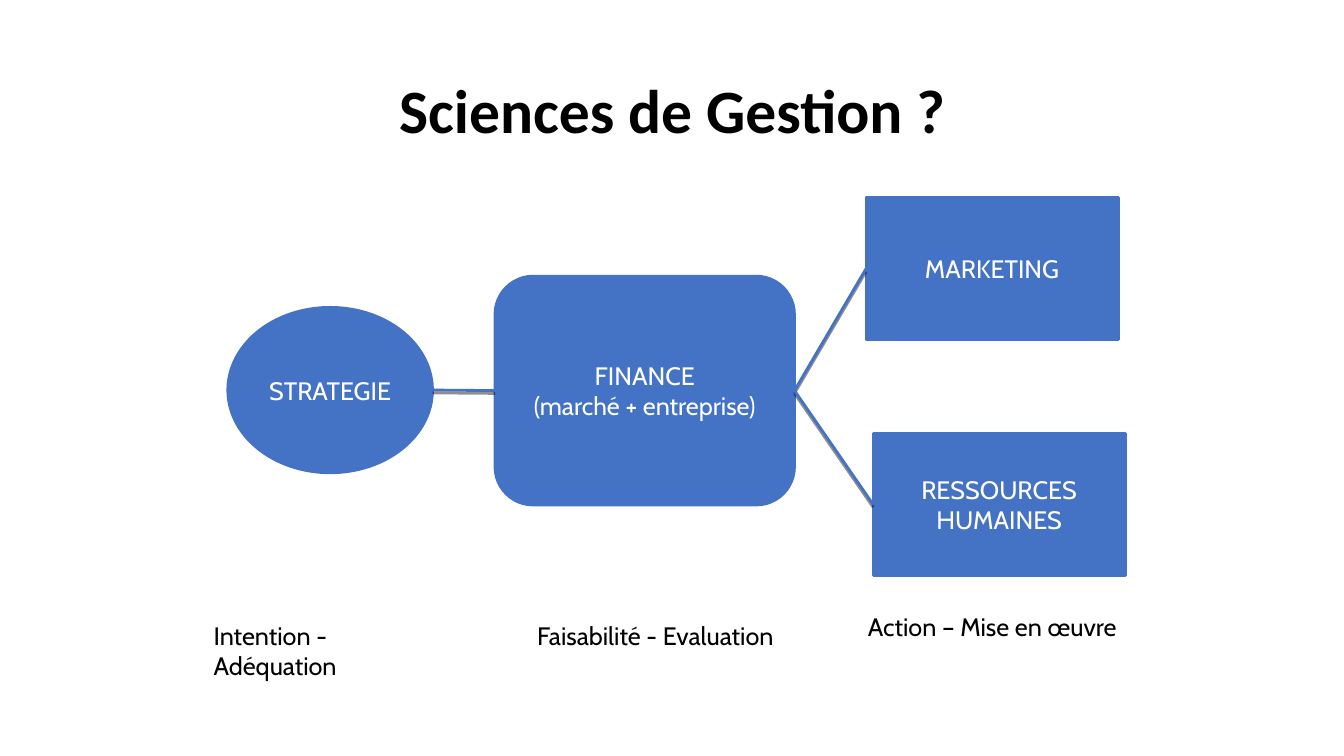
"""Build the management sciences slide: strategy, finance, then two fields of action."""
from dataclasses import dataclass

from lxml import etree
from pptx import Presentation
from pptx import util as u
from pptx.dml.color import RGBColor
from pptx.enum import shapes, text
from pptx.oxml import ns

TITLE = ("Sciences de Gestion ?", (0.92, 0.4, 11.5, 1.45))
BLOCKS = {
    "strategy": ("STRATEGIE", "OVAL", (2.26, 3.05, 2.03, 1.64)),
    "finance": ("FINANCE\n(marché + entreprise)", "ROUNDED_RECTANGLE", (4.91, 2.74, 2.97, 2.27)),
    "marketing": ("MARKETING", "RECTANGLE", (8.59, 1.96, 2.5, 1.41)),
    "people": ("RESSOURCES HUMAINES", "RECTANGLE", (8.66, 4.3, 2.5, 1.41)),
}
LINKS = [("strategy", "finance"), ("finance", "marketing"), ("finance", "people")]
CAPTIONS = [
    ("Intention - Adéquation", (2.02, 6.1, 2.58, 0.4)),
    ("Faisabilité - Evaluation", (5.23, 6.1, 2.58, 0.4)),
    ("Action – Mise en œuvre", (8.51, 6.02, 2.89, 0.4)),
]


@dataclass(frozen=True)
class Theme:
    """Colours, fonts and sizes of the slide."""
    blue: str = "4472C4"
    white: str = "FFFFFF"
    black: str = "000000"
    title_font: str = "Calibri"
    body_font: str = "Cabin"
    title_size: int = 44
    body_size: int = 18
    line_width: int = 2


THEME = Theme()


def inches(box):
    """Convert a tuple of numbers to lengths."""
    return [u.Inches(value) for value in box]


def write(shape, words, color=THEME.black, font=THEME.body_font, size=THEME.body_size,
          bold=False, align=text.PP_ALIGN.LEFT, anchor=text.MSO_ANCHOR.TOP,
          spacing=1.0, fit=text.MSO_AUTO_SIZE.NONE):
    """Put formatted text into a shape."""
    frame = shape.text_frame
    frame.text = words
    frame.word_wrap = True
    frame.auto_size = fit
    frame.vertical_anchor = anchor
    for paragraph in frame.paragraphs:
        paragraph.alignment = align
        paragraph.line_spacing = spacing
        for run in paragraph.runs:
            run.font.name = font
            run.font.size = u.Pt(size)
            run.font.bold = bold
            run.font.color.rgb = RGBColor.from_string(color)


def draw_line(line):
    """Give an outline the theme colour and width."""
    line.color.rgb = RGBColor.from_string(THEME.blue)
    line.width = u.Pt(THEME.line_width)


def add_block(slide, words, kind, box):
    """Add one filled block with centred text."""
    shape = slide.shapes.add_shape(shapes.MSO_SHAPE[kind], *inches(box))
    shape.shadow.inherit = False
    shape.fill.solid()
    shape.fill.fore_color.rgb = RGBColor.from_string(THEME.blue)
    draw_line(shape.line)
    write(shape, words, color=THEME.white, align=text.PP_ALIGN.CENTER,
          anchor=text.MSO_ANCHOR.MIDDLE)
    return shape


def add_link(slide, start, end):
    """Join the right side of one block to the left side of another."""
    connector = slide.shapes.add_connector(
        shapes.MSO_CONNECTOR.STRAIGHT,
        start.left + start.width, start.top + start.height // 2,
        end.left, end.top + end.height // 2)
    draw_line(connector.line)
    effects = etree.SubElement(connector._element.spPr, ns.qn("a:effectLst"))
    shadow = etree.SubElement(effects, ns.qn("a:outerShdw"), blurRad="0",
                              dist=str(u.Pt(2)), dir="5400000", rotWithShape="0")
    color = etree.SubElement(shadow, ns.qn("a:srgbClr"), val=THEME.black)
    etree.SubElement(color, ns.qn("a:alpha"), val="43000")


def main():
    """Lay out the slide and save it."""
    presentation = Presentation()
    presentation.slide_width, presentation.slide_height = inches((13.33, 7.5))
    slide = presentation.slides.add_slide(presentation.slide_layouts[5])

    words, box = TITLE
    title = slide.shapes.title
    title.left, title.top, title.width, title.height = inches(box)
    write(title, words, font=THEME.title_font, size=THEME.title_size, bold=True,
          align=text.PP_ALIGN.CENTER, anchor=text.MSO_ANCHOR.MIDDLE, spacing=0.9)

    blocks = {name: add_block(slide, *block) for name, block in BLOCKS.items()}
    for start, end in LINKS:
        add_link(slide, blocks[start], blocks[end])
    for words, box in CAPTIONS:
        caption = slide.shapes.add_textbox(*inches(box))
        write(caption, words, fit=text.MSO_AUTO_SIZE.SHAPE_TO_FIT_TEXT)

    presentation.save("out.pptx")


if __name__ == "__main__":
    main()
